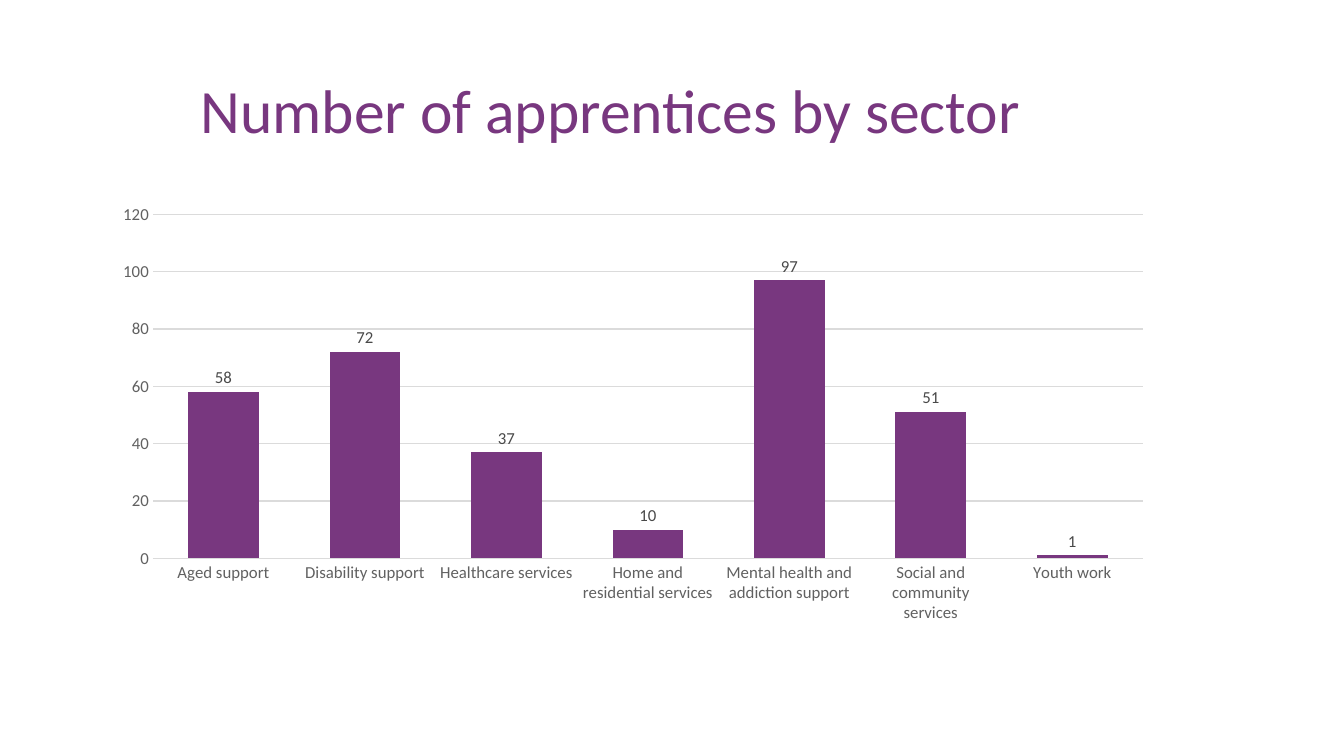
from pptx import Presentation
from pptx.chart.data import CategoryChartData
from pptx.dml.color import RGBColor
from pptx.enum.chart import XL_CHART_TYPE as ChartType
from pptx.enum.chart import XL_LABEL_POSITION as LabelPosition
from pptx.enum.chart import XL_TICK_MARK as TickMark
from pptx.enum.text import MSO_ANCHOR as Anchor
from pptx.enum.text import MSO_AUTO_SIZE as AutoSize
from pptx.enum.text import PP_ALIGN as Align
from pptx.util import Cm, Pt

FONT = "Calibri"
PURPLE = "78377F"
GRID_GREY = "DBDBDB"
AXIS_GREY = "616161"
LABEL_GREY = "494949"

APPRENTICES = {
    "Aged support": 58,
    "Disability support": 72,
    "Healthcare services": 37,
    "Home and residential services": 10,
    "Mental health and addiction support": 97,
    "Social and community services": 51,
    "Youth work": 1,
}


def colour(value):
    return RGBColor.from_string(value)


def style_font(font, size, value):
    font.name = FONT
    font.size = Pt(size)
    font.bold = False
    font.color.rgb = colour(value)


def style_line(line, width, value):
    line.width = Pt(width)
    line.color.rgb = colour(value)


def add_title(page, text):
    title = page.shapes.title
    title.left, title.top = Cm(4.8), Cm(1.02)
    title.width, title.height = Cm(26.75), Cm(3.68)
    frame = title.text_frame
    frame.text = text
    frame.word_wrap = True
    frame.auto_size = AutoSize.NONE
    frame.vertical_anchor = Anchor.MIDDLE
    para = frame.paragraphs[0]
    para.alignment = Align.LEFT
    para.line_spacing = 0.9
    style_font(para.runs[0].font, 44, PURPLE)


def style_axis(axis):
    axis.major_tick_mark = TickMark.NONE
    axis.minor_tick_mark = TickMark.NONE
    style_font(axis.tick_labels.font, 12, AXIS_GREY)


def style_axes(chart):
    sectors, counts = chart.category_axis, chart.value_axis
    style_axis(sectors)
    style_line(sectors.format.line, 1, GRID_GREY)
    style_axis(counts)
    counts.format.line.fill.background()
    counts.minimum_scale = 0
    counts.maximum_scale = 120
    counts.major_unit = 20
    counts.has_major_gridlines = True
    style_line(counts.major_gridlines.format.line, 0.75, GRID_GREY)


def style_columns(plot):
    plot.gap_width = 100
    plot.overlap = -24
    plot.vary_by_categories = False
    columns = plot.series[0]
    columns.format.fill.solid()
    columns.format.fill.fore_color.rgb = colour(PURPLE)
    labels = columns.data_labels
    labels.show_value = True
    labels.position = LabelPosition.OUTSIDE_END
    style_font(labels.font, 12, LABEL_GREY)


def add_sector_chart(page, counts):
    data = CategoryChartData()
    data.categories = list(counts)
    data.add_series("Series 1", list(counts.values()))
    frame = page.shapes.add_chart(
        ChartType.COLUMN_CLUSTERED, Cm(2.57), Cm(4.93), Cm(26.77), Cm(10.97), data
    )
    chart = frame.chart
    chart.has_title = False
    chart.has_legend = False
    style_font(chart.font, 10, "0C0C0C")
    style_axes(chart)
    style_columns(chart.plots[0])


def main():
    deck = Presentation()
    deck.slide_width, deck.slide_height = Cm(33.87), Cm(19.05)
    page = deck.slides.add_slide(deck.slide_layouts[5])
    add_title(page, "Number of apprentices by sector")
    add_sector_chart(page, APPRENTICES)
    deck.save("out.pptx")


if __name__ == "__main__":
    main()
